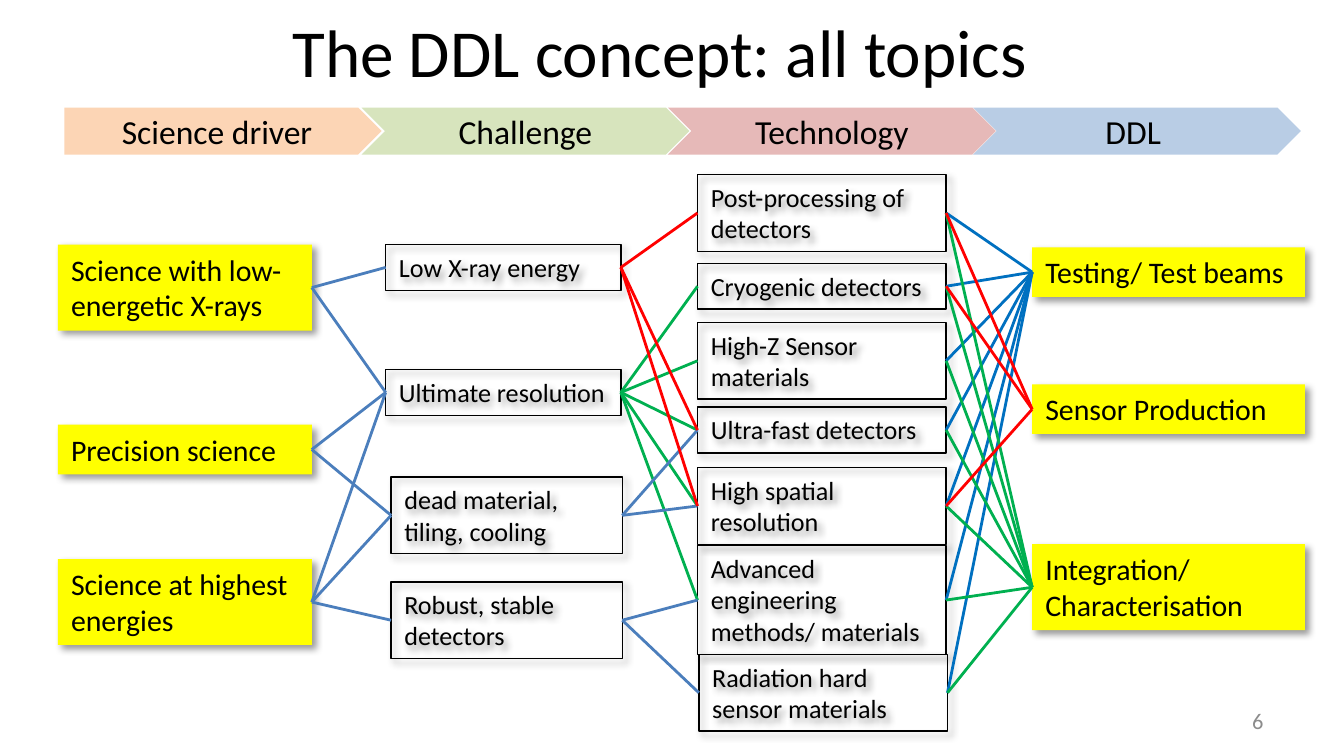
from lxml.etree import SubElement
from pptx import Presentation
from pptx.dml.color import RGBColor
from pptx.enum.shapes import MSO_CONNECTOR, MSO_SHAPE
from pptx.enum.text import MSO_ANCHOR, MSO_AUTO_SIZE, PP_ALIGN
from pptx.oxml.ns import qn
from pptx.util import Inches, Pt

BLACK = RGBColor(0x00, 0x00, 0x00)
GREY = RGBColor(0x8C, 0x8C, 0x8C)
YELLOW = RGBColor(0xFF, 0xFF, 0x00)
STEEL = RGBColor(0x4B, 0x7E, 0xBC)
BLUE = RGBColor(0x00, 0x70, 0xC0)
GREEN = RGBColor(0x00, 0xB0, 0x50)
RED = RGBColor(0xFF, 0x00, 0x00)
PEACH = RGBColor(0xFC, 0xD5, 0xB5)
LIME = RGBColor(0xD7, 0xE4, 0xBD)
ROSE = RGBColor(0xE6, 0xB9, 0xB8)
SKY = RGBColor(0xB9, 0xCD, 0xE5)

LEFT_SITE, RIGHT_SITE = 1, 3


def write(sp, text, size, align, anchor, color=BLACK):
    tf = sp.text_frame
    tf.word_wrap = True
    tf.vertical_anchor = anchor
    p = tf.paragraphs[0]
    p.alignment = align
    r = p.add_run()
    r.text = text
    r.font.name = "Calibri"
    r.font.size = Pt(size)
    r.font.color.rgb = color


def add_box(text, left, top, width, height, highlighted):
    """Add a shadowed box: yellow when highlighted, else outlined."""
    sp = s.shapes.add_shape(MSO_SHAPE.RECTANGLE, Inches(left), Inches(top),
                            Inches(width), Inches(height))
    if highlighted:
        sp.fill.solid()
        sp.fill.fore_color.rgb = YELLOW
        sp.line.fill.background()
    else:
        sp.fill.background()
        sp.line.color.rgb = BLACK
        sp.line.width = Pt(0.75)
    sp.shadow.inherit = False
    effects = sp._element.spPr.find(qn("a:effectLst"))
    shadow = SubElement(effects, qn("a:outerShdw"), blurRad=str(Pt(4)), dist=str(Pt(3)),
                        dir="2700000", algn="tl", rotWithShape="0")
    shade = SubElement(shadow, qn("a:srgbClr"), val="000000")
    SubElement(shade, qn("a:alpha"), val="40000")
    write(sp, text, 16 if highlighted else 14, PP_ALIGN.LEFT, MSO_ANCHOR.TOP)
    sp.text_frame.auto_size = MSO_AUTO_SIZE.SHAPE_TO_FIT_TEXT
    return sp


prs = Presentation()
prs.slide_width = Inches(10)
prs.slide_height = prs.slide_width * 9 // 16
s = prs.slides.add_slide(prs.slide_layouts[5])

title = s.shapes.title
title.left, title.top = Inches(0.41), Inches(-0.09)
title.width, title.height = Inches(9), Inches(0.94)
write(title, "The DDL concept: all topics", 36, PP_ALIGN.CENTER, MSO_ANCHOR.MIDDLE)

number = s.shapes.add_textbox(Inches(7.17), Inches(5.21), Inches(2.33), Inches(0.3))
write(number, "6", 12, PP_ALIGN.RIGHT, MSO_ANCHOR.MIDDLE, GREY)

# Columns of boxes: key, text, left, top, width, height
drivers = [
    ("low", "Science with low-energetic X-rays", 0.43, 1.82, 1.89, 0.64),
    ("precision", "Precision science", 0.43, 3.16, 1.89, 0.37),
    ("highest", "Science at highest energies", 0.43, 4.16, 1.89, 0.64),
]
challenges = [
    ("xray", "Low X-ray energy", 2.87, 1.82, 1.75, 0.34),
    ("ultimate", "Ultimate resolution", 2.87, 2.75, 1.75, 0.34),
    ("dead", "dead material, tiling, cooling", 2.91, 3.55, 1.72, 0.57),
    ("robust", "Robust, stable detectors", 2.91, 4.33, 1.72, 0.57),
]
technologies = [
    ("post", "Post-processing of detectors", 5.19, 1.3, 1.85, 0.57),
    ("cryo", "Cryogenic detectors", 5.19, 1.96, 1.85, 0.34),
    ("highz", "High-Z Sensor materials", 5.19, 2.4, 1.85, 0.57),
    ("fast", "Ultra-fast detectors", 5.19, 3.03, 1.85, 0.34),
    ("spatial", "High spatial resolution", 5.19, 3.48, 1.85, 0.57),
    ("advanced", "Advanced engineering methods/ materials", 5.19, 4.06, 1.85, 0.81),
    ("radiation", "Radiation hard sensor materials", 5.2, 4.87, 1.85, 0.57),
]
ddl = [
    ("testing", "Testing/ Test beams", 7.68, 1.84, 2.03, 0.37),
    ("sensor", "Sensor Production", 7.68, 2.86, 2.03, 0.37),
    ("integration", "Integration/ Characterisation", 7.68, 4.05, 2.03, 0.64),
]
boxes = {}
for column, highlighted in ((drivers, True), (challenges, False),
                            (technologies, False), (ddl, True)):
    for key, text, left, top, width, height in column:
        boxes[key] = add_box(text, left, top, width, height, highlighted)

# Links: sources, targets, colour; every source joins every target
all_technologies = [row[0] for row in technologies]
links = [
    (["low"], ["xray", "ultimate"], STEEL),
    (["precision"], ["ultimate", "dead"], STEEL),
    (["highest"], ["robust", "dead", "ultimate"], STEEL),
    (["ultimate"], ["cryo", "highz", "fast", "spatial", "advanced"], GREEN),
    (["robust"], ["radiation", "advanced"], STEEL),
    (["dead"], ["spatial", "fast"], STEEL),
    (["xray"], ["post", "fast", "spatial"], RED),
    (all_technologies, ["testing"], BLUE),
    (all_technologies, ["integration"], GREEN),
    (["cryo", "spatial", "post"], ["sensor"], RED),
]
for sources, targets, color in links:
    for source in sources:
        for target in targets:
            line = s.shapes.add_connector(MSO_CONNECTOR.STRAIGHT, 0, 0, 0, 0)
            line.begin_connect(boxes[source], RIGHT_SITE)
            line.end_connect(boxes[target], LEFT_SITE)
            line.line.color.rgb = color
            line.line.width = Pt(1.5)
            SubElement(line._element.spPr, qn("a:effectLst"))

headings = [
    ("Science driver", MSO_SHAPE.PENTAGON, 0.48, 2.36, PEACH),
    ("Challenge", MSO_SHAPE.CHEVRON, 2.69, 2.44, LIME),
    ("Technology", MSO_SHAPE.CHEVRON, 4.97, 2.44, ROSE),
    ("DDL ", MSO_SHAPE.CHEVRON, 7.24, 2.44, SKY),
]
for text, kind, left, width, color in headings:
    sp = s.shapes.add_shape(kind, Inches(left), Inches(0.8), Inches(width), Inches(0.35))
    sp.fill.solid()
    sp.fill.fore_color.rgb = color
    sp.line.fill.background()
    sp.shadow.inherit = False
    write(sp, text, 18, PP_ALIGN.CENTER, MSO_ANCHOR.MIDDLE)

prs.save("out.pptx")
